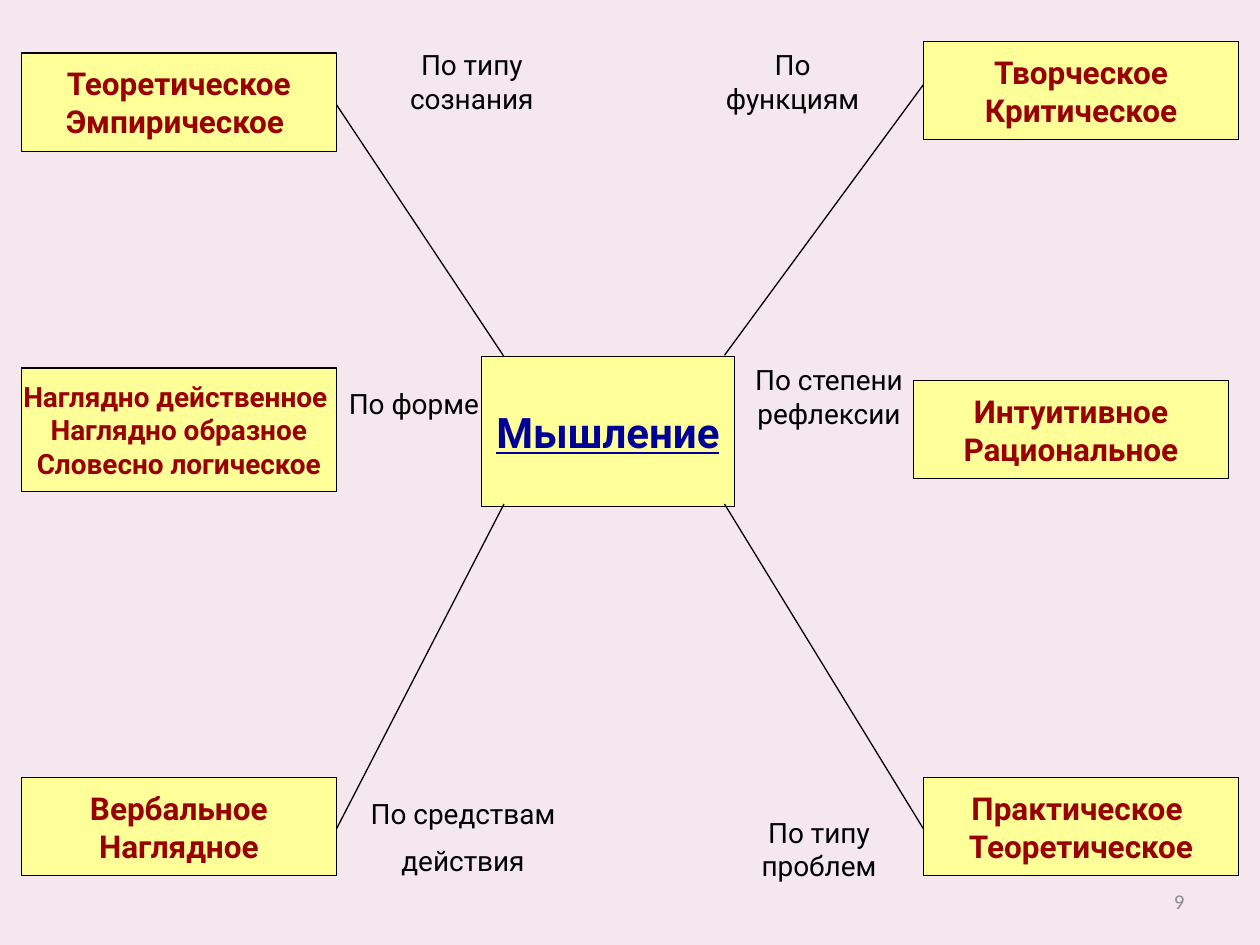
from lxml import etree
from pptx import Presentation
from pptx.dml.color import RGBColor
from pptx.enum.shapes import MSO_CONNECTOR, MSO_SHAPE
from pptx.enum.text import MSO_ANCHOR, MSO_AUTO_SIZE, PP_ALIGN
from pptx.oxml.ns import qn
from pptx.util import Inches, Pt

BACKGROUND = RGBColor(0xF4, 0xE7, 0xED)
YELLOW = RGBColor(0xFF, 0xFF, 0x99)
BLACK = RGBColor(0, 0, 0)
NAVY = RGBColor(0, 0, 0x99)
DARK_RED = RGBColor(0x99, 0, 0)
GRAY = RGBColor(0x8C, 0x8C, 0x8C)

LEFT_X, BOX_W, BOX_H = 0.17, 2.5, 0.78
RIGHT_X = 10 - LEFT_X - BOX_W

# lines of text, box, font size
KINDS = [
    (["Теоретическое", "Эмпирическое "], (LEFT_X, 0.42, BOX_W, BOX_H), 18),
    (["Наглядно действенное ", "Наглядно образное", "Словесно логическое"],
     (LEFT_X, 2.92, BOX_W, 0.98), 16),
    (["Вербальное", "Наглядное"], (LEFT_X, 6.17, BOX_W, BOX_H), 18),
    (["Творческое", "Критическое"], (RIGHT_X, 0.33, BOX_W, BOX_H), 18),
    (["Интуитивное", "Рациональное"], (7.25, 3.02, BOX_W, BOX_H), 18),
    (["Практическое ", "Теоретическое"], (RIGHT_X, 6.17, BOX_W, BOX_H), 18),
]
CRITERIA = [
    (["По типу сознания"], (2.83, 0.33, 1.83, 0.64)),
    (["По форме"], (2.67, 3.02, 1.23, 0.37)),
    (["По средствам", "действия"], (2.8, 6.27, 1.75, 0.77)),
    (["По функциям"], (5.5, 0.33, 1.58, 0.37)),
    (["По степени рефлексии"], (5.83, 2.83, 1.5, 0.64)),
    (["По типу проблем"], (5.75, 6.42, 1.5, 0.64)),
]
BRANCHES = [
    ((4, 2.83), (LEFT_X + BOX_W, 0.83)),
    ((4, 4), (LEFT_X + BOX_W, 6.58)),
    ((5.75, 2.82), (RIGHT_X, 0.67)),
    ((5.75, 4), (RIGHT_X, 6.58)),
]


def inches(values):
    return [Inches(v) for v in values]


def write(tf, lines, size, color, font="Roboto", bold=False, underline=False,
          align=PP_ALIGN.CENTER, anchor=MSO_ANCHOR.TOP, wrap=True, gap=0):
    """Put one paragraph per line; gap is the space between paragraphs in points."""
    tf.word_wrap = wrap
    tf.vertical_anchor = anchor
    for i, line in enumerate(lines):
        p = tf.add_paragraph() if i else tf.paragraphs[0]
        p.alignment = align
        if i and gap:
            p.space_before = Pt(gap)
        r = p.add_run()
        r.text = line
        r.font.name = font
        r.font.size = Pt(size)
        r.font.bold = bold
        r.font.underline = underline
        r.font.color.rgb = color


def add_box(s, lines, box, size, color=DARK_RED, underline=False):
    sp = s.shapes.add_shape(MSO_SHAPE.RECTANGLE, *inches(box))
    sp.shadow.inherit = False
    sp.fill.solid()
    sp.fill.fore_color.rgb = YELLOW
    sp.line.color.rgb = BLACK
    sp.line.width = Pt(0.75)
    write(sp.text_frame, lines, size, color, bold=True, underline=underline,
          anchor=MSO_ANCHOR.MIDDLE, wrap=False)


def add_criterion(s, lines, box):
    tf = s.shapes.add_textbox(*inches(box)).text_frame
    write(tf, lines, 16, BLACK, gap=8)
    tf.auto_size = MSO_AUTO_SIZE.SHAPE_TO_FIT_TEXT


def add_branch(s, start, end):
    line = s.shapes.add_connector(MSO_CONNECTOR.STRAIGHT, *inches(start + end))
    line.line.color.rgb = BLACK
    line.line.width = Pt(0.75)
    etree.SubElement(line._element.spPr, qn("a:effectLst"))


def add_page_number(s, number, box):
    tf = s.shapes.add_textbox(*inches(box)).text_frame
    write(tf, [number], 12, GRAY, font="Calibri", align=PP_ALIGN.RIGHT,
          anchor=MSO_ANCHOR.MIDDLE)


def main():
    prs = Presentation()
    prs.slide_width, prs.slide_height = Inches(10), Inches(7.5)
    s = prs.slides.add_slide(prs.slide_layouts[6])
    s.background.fill.solid()
    s.background.fill.fore_color.rgb = BACKGROUND

    add_box(s, ["Мышление"], (3.82, 2.83, 2.01, 1.19), 24, NAVY, underline=True)
    for start, end in BRANCHES:
        add_branch(s, start, end)
    for lines, box in CRITERIA:
        add_criterion(s, lines, box)
    for lines, box, size in KINDS:
        add_box(s, lines, box, size)
    add_page_number(s, "9", (7.17, 6.95, 2.33, 0.4))
    prs.save("out.pptx")


if __name__ == "__main__":
    main()
